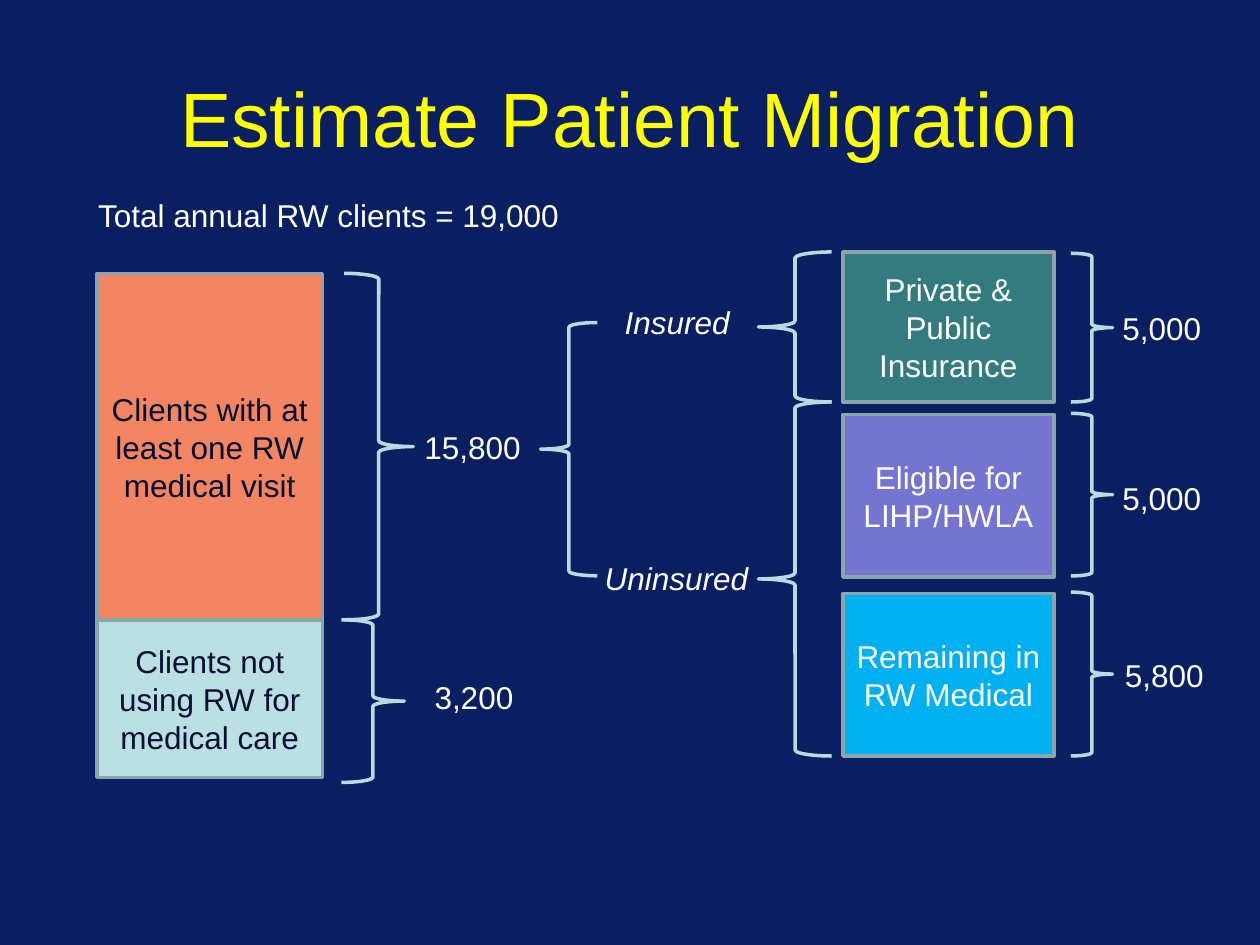
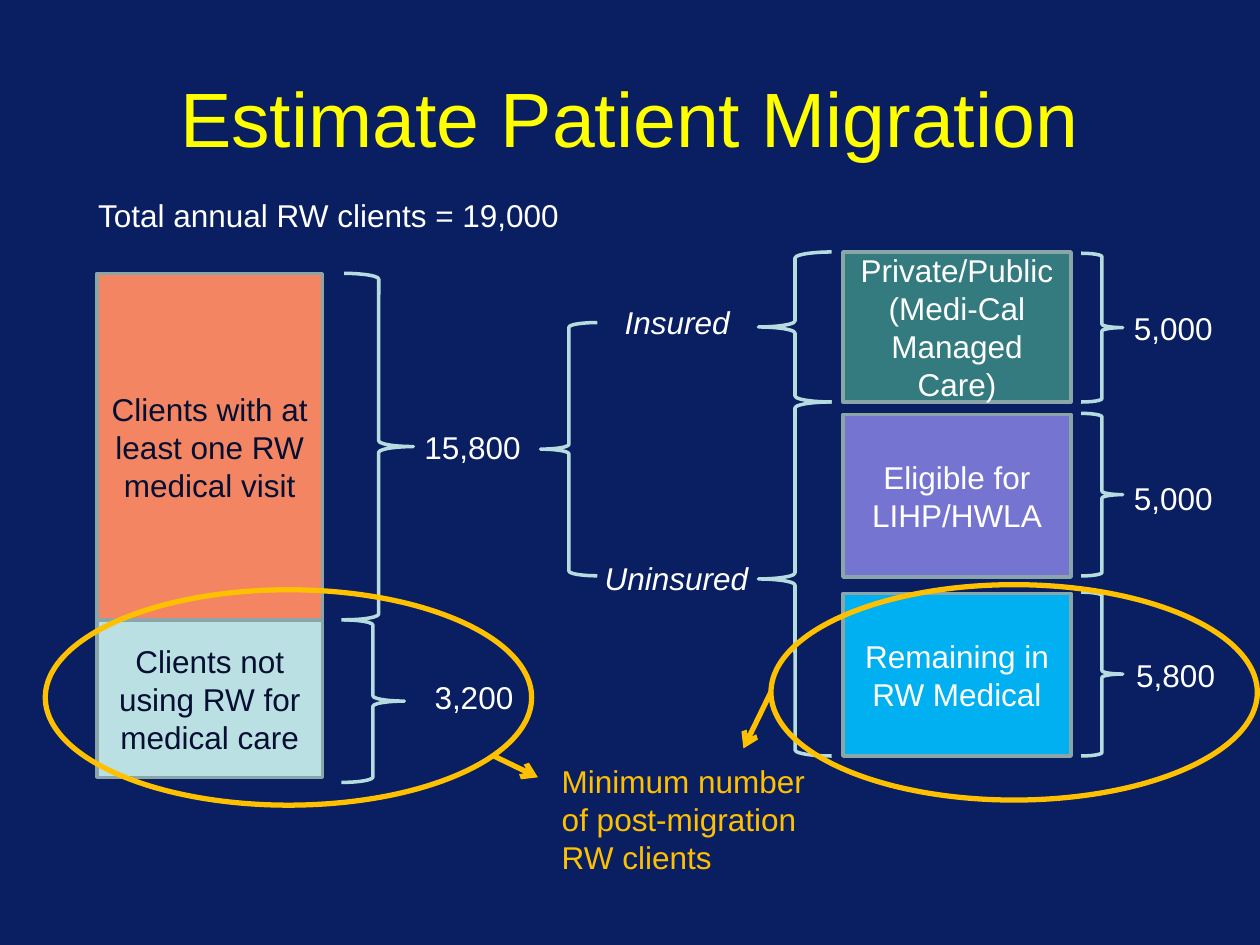
from dataclasses import dataclass

from lxml import etree
from pptx import Presentation
from pptx.dml.color import RGBColor
from pptx.enum.shapes import MSO_CONNECTOR, MSO_SHAPE
from pptx.enum.text import MSO_ANCHOR, PP_ALIGN
from pptx.oxml.ns import qn
from pptx.util import Pt

RECT, OVAL = MSO_SHAPE.RECTANGLE, MSO_SHAPE.OVAL
LEFT_BRACE, RIGHT_BRACE = MSO_SHAPE.LEFT_BRACE, MSO_SHAPE.RIGHT_BRACE
STRAIGHT = MSO_CONNECTOR.STRAIGHT
TOP, MIDDLE = MSO_ANCHOR.TOP, MSO_ANCHOR.MIDDLE
LEFT, CENTER = PP_ALIGN.LEFT, PP_ALIGN.CENTER

NAVY = RGBColor(0x09, 0x1F, 0x62)
YELLOW = RGBColor(0xFF, 0xFF, 0x00)
WHITE = RGBColor(0xFF, 0xFF, 0xFF)
INK = RGBColor(0x04, 0x0F, 0x31)
CORAL = RGBColor(0xF3, 0x85, 0x63)
PALE = RGBColor(0xBB, 0xE0, 0xE3)
TEAL = RGBColor(0x34, 0x7B, 0x80)
VIOLET = RGBColor(0x75, 0x75, 0xD1)
SKY = RGBColor(0x00, 0xB0, 0xF0)
EDGE = RGBColor(0x8A, 0xA6, 0xA8)
BRACE = RGBColor(0xB6, 0xDC, 0xDF)
GOLD = RGBColor(0xFF, 0xC0, 0x00)
FONT = "Arial"
ROW = 28.8  # height of a one-line label


@dataclass(frozen=True)
class Area:
    left: float
    top: float
    width: float
    height: float

    def points(self) -> list:
        return [Pt(v) for v in (self.left, self.top, self.width, self.height)]


@dataclass(frozen=True)
class Block:
    text: str
    area: Area
    fill: RGBColor
    ink: RGBColor


@dataclass(frozen=True)
class Label:
    text: str
    area: Area
    italic: bool = False


@dataclass(frozen=True)
class Group:
    """One right-hand block with its brace and its count."""
    text: str
    fill: RGBColor
    top: float
    height: float
    brace_top: float
    brace_height: float
    count: str
    count_top: float
    shift: float = 0


@dataclass(frozen=True)
class Column:
    """Places of the right-hand blocks, braces and counts."""
    first: str
    width: float
    brace: float
    count: float


# Parts shared by both slides
BLOCKS = [
    Block("Clients with at least one RW medical visit",
          Area(55.4, 156.2, 128.9, 198), CORAL, INK),
    Block("Clients not using RW for medical care",
          Area(55.4, 354.2, 128.9, 90), PALE, INK),
]
BRACES = [
    (RIGHT_BRACE, Area(196.6, 156.2, 39.6, 198)),
    (RIGHT_BRACE, Area(195.1, 354.2, 36, 92.9)),
    (LEFT_BRACE, Area(308.9, 184.3, 32.4, 144.7)),
    (LEFT_BRACE, Area(433.4, 144, 41.8, 85.7)),
    (LEFT_BRACE, Area(433.4, 229.7, 41.8, 202.3)),
]
LABELS = [
    Label("Total annual RW clients = 19,000", Area(49, 108.7, 300.2, ROW)),
    Label("15,800", Area(235.4, 241.2, 72.7, ROW)),
    Label("3,200", Area(241.2, 383.8, 72.7, ROW)),
    Label("Insured", Area(349.9, 169.9, 102.2, ROW), True),
    Label("Uninsured", Area(338.4, 316.1, 102.2, ROW), True),
]
COLUMNS = [
    Column("Private & Public Insurance", 120.5, 612, 634.3),
    Column("Private/Public (Medi-Cal Managed Care)", 130.3, 617.8, 640.8),
]


def groups(first: str) -> list[Group]:
    return [
        Group(first, TEAL, 144, 85.7, 144.7, 85, "5,000", 172.8),
        Group("Eligible for LIHP/HWLA", VIOLET, 236.9, 92.9,
              236.2, 92.9, "5,000", 270),
        Group("Remaining in RW Medical", SKY, 339.1, 92.9,
              338.4, 93.6, "5,800", 371.5, 1.4),
    ]


def write(shape, text: str, *, size: float = 18, color: RGBColor = WHITE,
          align=LEFT, anchor=TOP, italic: bool = False) -> None:
    frame = shape.text_frame
    frame.word_wrap = True
    frame.vertical_anchor = anchor
    line = frame.paragraphs[0]
    line.alignment = align
    run = line.add_run()
    run.text = text
    font = run.font
    font.name, font.size, font.italic = FONT, Pt(size), italic
    font.color.rgb = color


def add_text(slide, text: str, area: Area, **form) -> None:
    write(slide.shapes.add_textbox(*area.points()), text, **form)


def add_form(slide, kind, area: Area, line: RGBColor, weight: float = 2,
             fill: RGBColor | None = None):
    shape = slide.shapes.add_shape(kind, *area.points())
    shape.shadow.inherit = False
    if fill is None:
        shape.fill.background()
    else:
        shape.fill.solid()
        shape.fill.fore_color.rgb = fill
    shape.line.color.rgb = line
    shape.line.width = Pt(weight)
    return shape


def add_block(slide, block: Block) -> None:
    shape = add_form(slide, RECT, block.area, EDGE, fill=block.fill)
    write(shape, block.text, color=block.ink, align=CENTER, anchor=MIDDLE)


def add_arrow(slide, start: tuple, end: tuple) -> None:
    arrow = slide.shapes.add_connector(
        STRAIGHT, *(Pt(v) for v in (*start, *end)))
    arrow.line.color.rgb = GOLD
    arrow.line.width = Pt(3)
    etree.SubElement(arrow.line._get_or_add_ln(), qn("a:tailEnd"), type="arrow")
    etree.SubElement(arrow._element.spPr, qn("a:effectLst"))


def add_base(deck, column: Column):
    slide = deck.slides.add_slide(deck.slide_layouts[6])
    slide.background.fill.solid()
    slide.background.fill.fore_color.rgb = NAVY
    add_text(slide, "Estimate Patient Migration", Area(36, 21.6, 648, 90),
             size=44, color=YELLOW, align=CENTER, anchor=MIDDLE)

    # Client blocks, braces and labels
    for block in BLOCKS:
        add_block(slide, block)
    for kind, area in BRACES:
        add_form(slide, kind, area, BRACE)
    for label in LABELS:
        add_text(slide, label.text, label.area, italic=label.italic)

    # Coverage groups
    for group in groups(column.first):
        area = Area(481.7, group.top, column.width, group.height)
        add_block(slide, Block(group.text, area, group.fill, WHITE))
        add_form(slide, RIGHT_BRACE, Area(column.brace, group.brace_top, 23.8,
                                          group.brace_height), BRACE)
        add_text(slide, group.count, Area(column.count + group.shift,
                                          group.count_top, 72.7, ROW))
    return slide


def add_focus(slide) -> None:
    # Rings and arrows that point to the closing remark
    for left, top in ((25.9, 337), (440.6, 334.1)):
        add_form(slide, OVAL, Area(left, top, 277.9, 123.1), GOLD, 3)
    add_arrow(slide, (282.2, 432), (307.4, 444.2))
    add_arrow(slide, (440.6, 395.3), (424.8, 427.7))
    add_text(slide, "Minimum number of post-migration RW clients",
             Area(313.9, 432, 162, 72.7), color=GOLD)


def main() -> None:
    deck = Presentation()
    deck.slide_width, deck.slide_height = Pt(720), Pt(540)
    plain, focus = [add_base(deck, column) for column in COLUMNS]
    add_focus(focus)
    deck.save("out.pptx")


if __name__ == "__main__":
    main()
